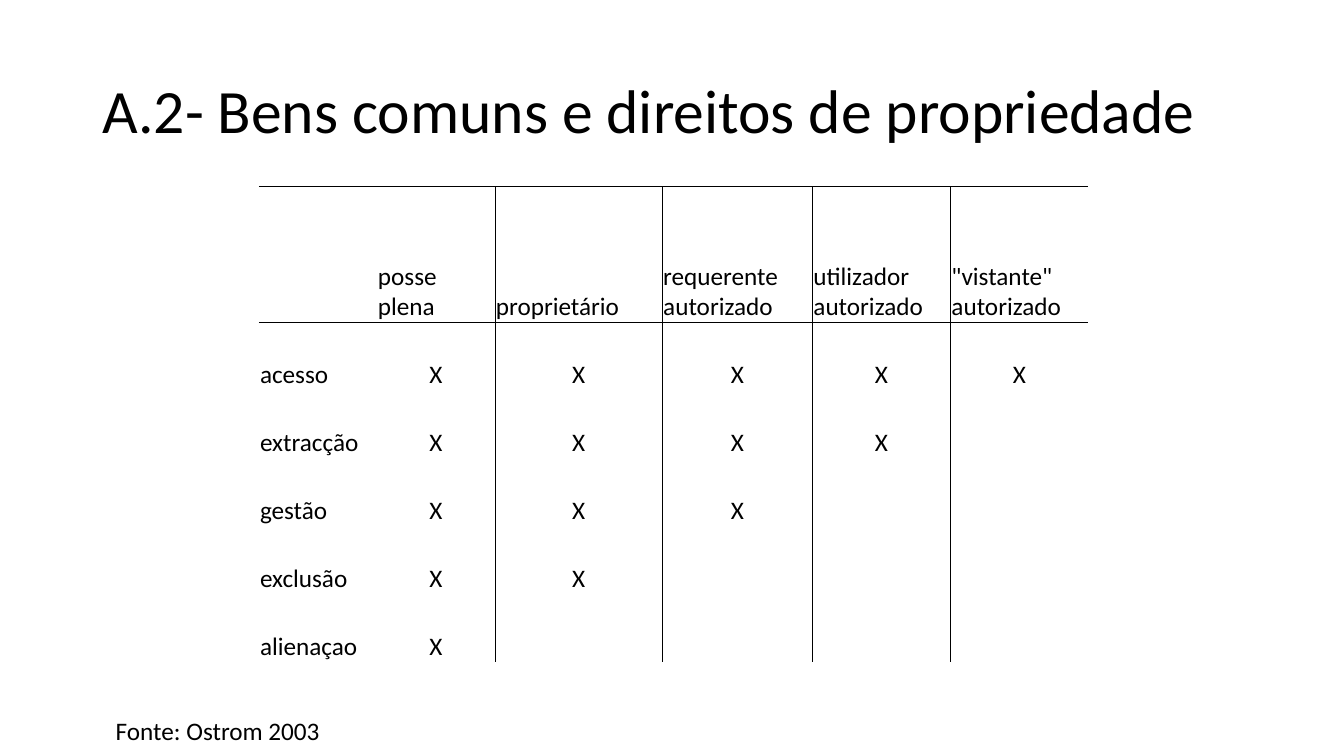
from dataclasses import dataclass

from lxml.etree import SubElement
from pptx import Presentation
from pptx.dml.color import RGBColor
from pptx.enum.text import MSO_ANCHOR as Anchor, MSO_AUTO_SIZE as AutoSize, PP_ALIGN as Align
from pptx.oxml.ns import qn
from pptx.slide import Slide
from pptx.table import _Cell as Cell
from pptx.text.text import TextFrame
from pptx.util import Pt

BLACK = "000000"
FONT = "Calibri"
BODY_SIZE = 18
RULE_WIDTH = 0.5
HEADER_HEIGHT, RIGHT_HEIGHT = 97.2, 48.5


@dataclass(frozen=True)
class Holder:
    heading: str
    width: float
    rights_held: int


RIGHTS = ["acesso", "extracção", "gestão", "exclusão", "alienaçao"]
RIGHTS_WIDTH = 84.3
HOLDERS = [
    Holder("posse plena", 84.3, 5),
    Holder("proprietário", 119.5, 4),
    Holder("requerente autorizado", 107.3, 3),
    Holder("utilizador autorizado", 98.6, 2),
    Holder('"vistante" autorizado', 98.6, 1),
]


def colour(hex_value: str) -> RGBColor:
    return RGBColor.from_string(hex_value)


def write(frame: TextFrame, text: str, size: float, align: Align = Align.LEFT) -> None:
    frame.text = text
    paragraph = frame.paragraphs[0]
    paragraph.alignment = align
    for run in paragraph.runs:
        run.font.size = Pt(size)
        run.font.name = FONT
        run.font.color.rgb = colour(BLACK)


def set_borders(cell: Cell, ruled: dict[str, bool]) -> None:
    """Rule the chosen sides (L, R, T, B, in that order) and clear the others."""
    properties = cell._tc.get_or_add_tcPr()
    for position, (side, visible) in enumerate(ruled.items()):
        line = SubElement(properties, qn(f"a:ln{side}"), w=str(Pt(RULE_WIDTH)))
        properties.insert(position, line)
        if visible:
            fill = SubElement(line, qn("a:solidFill"))
            SubElement(fill, qn("a:srgbClr"), val=BLACK)
        else:
            SubElement(line, qn("a:noFill"))


def cell_text(row: int, column: int) -> str:
    if column == 0:
        return RIGHTS[row - 1] if row else ""
    holder = HOLDERS[column - 1]
    if row == 0:
        return holder.heading
    return "X" if row <= holder.rights_held else ""


def add_title(slide: Slide) -> None:
    title = slide.shapes.title
    title.left, title.top, title.width, title.height = Pt(66), Pt(28.8), Pt(828), Pt(104.4)
    frame = title.text_frame
    write(frame, "A.2- Bens comuns e direitos de propriedade", 44)
    frame.auto_size = AutoSize.NONE
    frame.vertical_anchor = Anchor.MIDDLE
    frame.paragraphs[0].line_spacing = 0.9


def add_rights_table(slide: Slide) -> None:
    widths = [RIGHTS_WIDTH] + [holder.width for holder in HOLDERS]
    heights = [HEADER_HEIGHT] + [RIGHT_HEIGHT] * len(RIGHTS)
    table = slide.shapes.add_table(
        len(heights), len(widths), Pt(185), Pt(133.2), Pt(sum(widths)), Pt(sum(heights))
    ).table
    table.first_row = table.horz_banding = False
    for table_column, width in zip(table.columns, widths):
        table_column.width = Pt(width)
    for row, height in enumerate(heights):
        table.rows[row].height = Pt(height)
        for column in range(len(widths)):
            cell = table.cell(row, column)
            is_mark = row > 0 and column > 0
            write(cell.text_frame, cell_text(row, column), BODY_SIZE,
                  Align.CENTER if is_mark else Align.LEFT)
            cell.vertical_anchor = Anchor.BOTTOM
            cell.margin_left = cell.margin_right = cell.margin_top = Pt(0.75)
            cell.margin_bottom = 0
            cell.fill.background()
            set_borders(cell, {
                "L": column > 1,
                "R": 0 < column < len(HOLDERS),
                "T": row <= 1,
                "B": row == 0,
            })


def add_citation(slide: Slide) -> None:
    citation = slide.shapes.add_textbox(Pt(75.6), Pt(507.6), Pt(165.6), Pt(29))
    frame = citation.text_frame
    write(frame, "Fonte: Ostrom 2003", BODY_SIZE)
    frame.word_wrap = False
    frame.auto_size = AutoSize.SHAPE_TO_FIT_TEXT


def main() -> None:
    presentation = Presentation()
    presentation.slide_width, presentation.slide_height = Pt(960), Pt(540)
    title_only = presentation.slide_layouts[5]
    slide = presentation.slides.add_slide(title_only)
    add_title(slide)
    add_rights_table(slide)
    add_citation(slide)
    presentation.save("out.pptx")


if __name__ == "__main__":
    main()
